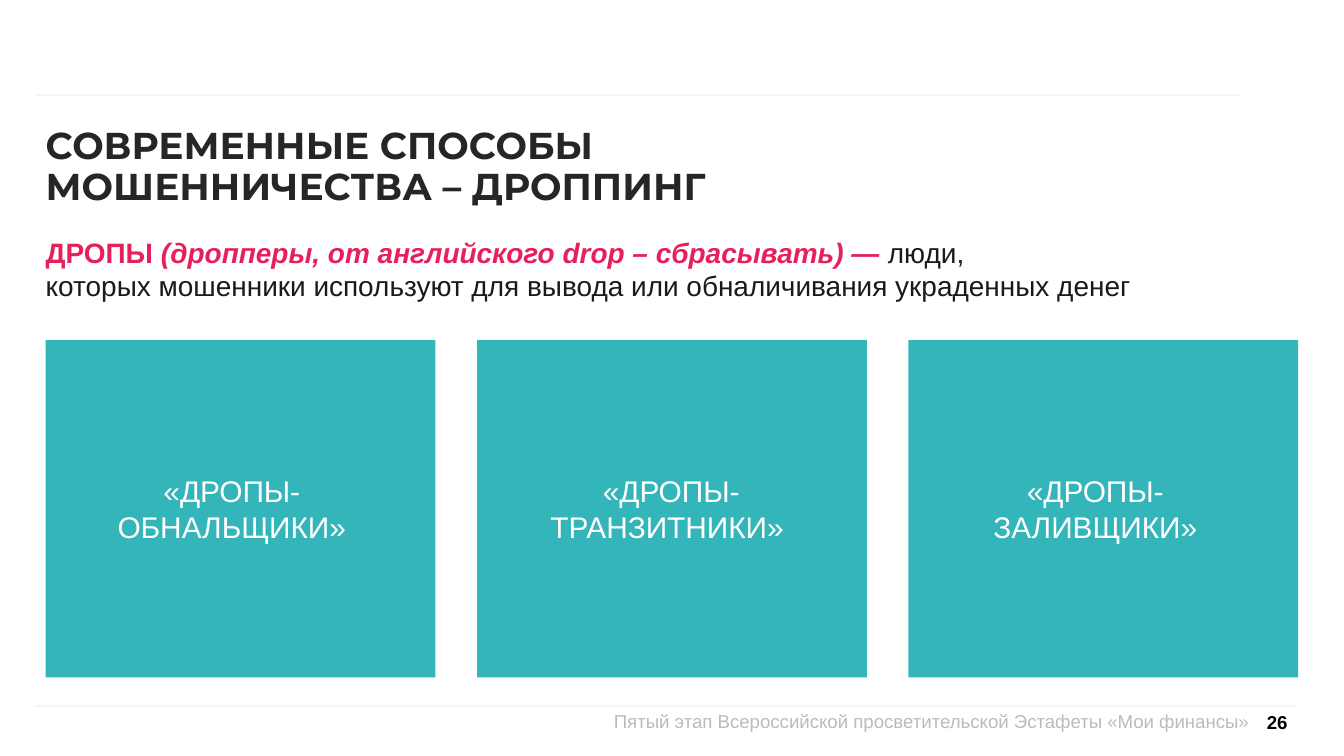
from lxml import etree
from pptx import Presentation
from pptx.dml.color import RGBColor
from pptx.enum import shapes, text
from pptx.oxml.ns import qn
from pptx.util import Inches, Pt

TEAL = RGBColor(0x33, 0xB5, 0xBA)
PINK = RGBColor(0xE5, 0x20, 0x5A)
DARK = RGBColor(0x26, 0x26, 0x26)
INK = RGBColor(0x1A, 0x1A, 0x1A)
GREY = RGBColor(0xB9, 0xBC, 0xBF)
PALE = RGBColor(0xF5, 0xF5, 0xF5)
BLACK = RGBColor(0, 0, 0)
WHITE = RGBColor(0xFF, 0xFF, 0xFF)
LEFT = text.PP_ALIGN.LEFT
MID = text.PP_ALIGN.CENTER
RIGHT = text.PP_ALIGN.RIGHT

deck = Presentation()
deck.slide_width = Inches(10)
deck.slide_height = Inches(10 * 9 / 16)
slide = deck.slides.add_slide(deck.slide_layouts[5])


def write(words, box=None, at=None, size=16, color=WHITE, bold=False,
          italic=False, font="Arial", align=LEFT, inset=0, wrap=True,
          anchor=text.MSO_ANCHOR.TOP):
    """Append a formatted run to box, or to a new text box placed at `at`."""
    if box is None:
        box = slide.shapes.add_textbox(0, 0, 0, 0)
    if at:
        box.left, box.top, box.width, box.height = map(Inches, at)
    frame = box.text_frame
    frame.word_wrap = wrap
    frame.auto_size = text.MSO_AUTO_SIZE.NONE
    frame.vertical_anchor = anchor
    frame.margin_left = frame.margin_right = Inches(inset)
    frame.margin_top = frame.margin_bottom = Inches(inset)
    para = frame.paragraphs[0]
    para.alignment = align
    for i, line in enumerate(words.split("\n")):
        if i:
            para.add_line_break()
        run = para.add_run()
        run.text = line
        run.font.name, run.font.size = font, Pt(size)
        run.font.bold, run.font.italic = bold, italic
        run.font.color.rgb = color
    return box


# Thin rules above the title and above the footer
for y, end in [(0.71, 9.22), (5.25, 9.65)]:
    rule = slide.shapes.add_connector(
        shapes.MSO_CONNECTOR.STRAIGHT,
        Inches(0.27), Inches(y), Inches(end), Inches(y))
    rule.line.color.rgb = PALE
    rule.line.width = Pt(1)
    etree.SubElement(rule._element.spPr, qn("a:effectLst"))

write("Пятый этап Всероссийской просветительской Эстафеты «Мои финансы»",
      at=(3.58, 5.28, 5.71, 0.35), size=10, color=GREY, align=RIGHT)

# Three equal cards
for i in range(3):
    card = slide.shapes.add_shape(
        shapes.MSO_SHAPE.RECTANGLE, Inches(0.34 + 3.21 * i), Inches(2.53),
        Inches(2.9), Inches(2.51))
    card.shadow.inherit = False
    card.fill.solid()
    card.fill.fore_color.rgb = TEAL
    card.line.fill.background()

title = write("СОВРЕМЕННЫЕ СПОСОБЫ МОШЕННИЧЕСТВА – ДРОППИНГ",
              box=slide.shapes.title, at=(0.34, 0.95, 6.99, 0.58),
              size=20, color=DARK, bold=True, font="Montserrat")
title.text_frame.paragraphs[0].line_spacing = 0.9

write("26", at=(9.45, 5.23, 0.19, 0.28), size=10, color=BLACK, bold=True,
      align=RIGHT, inset=0.06, wrap=False, anchor=text.MSO_ANCHOR.MIDDLE)

intro = write("ДРОПЫ", at=(0.34, 1.75, 8.5, 0.58),
              size=15, color=PINK, bold=True)
write(" (дропперы, от английского drop – сбрасывать) — ", box=intro,
      size=15, color=PINK, bold=True, italic=True)
write("люди, \nкоторых мошенники используют для вывода или обналичивания "
      "украденных денег", box=intro, size=15, color=INK)

for label, x, width in [("«ДРОПЫ-ОБНАЛЬЩИКИ»", 0.8, 1.85),
                        ("«ДРОПЫ-ТРАНЗИТНИКИ» ", 4.08, 1.83),
                        ("«ДРОПЫ-ЗАЛИВЩИКИ»", 7.33, 1.64)]:
    write(label, at=(x, 3.52, width, 0.54), align=MID)

deck.save("out.pptx")
